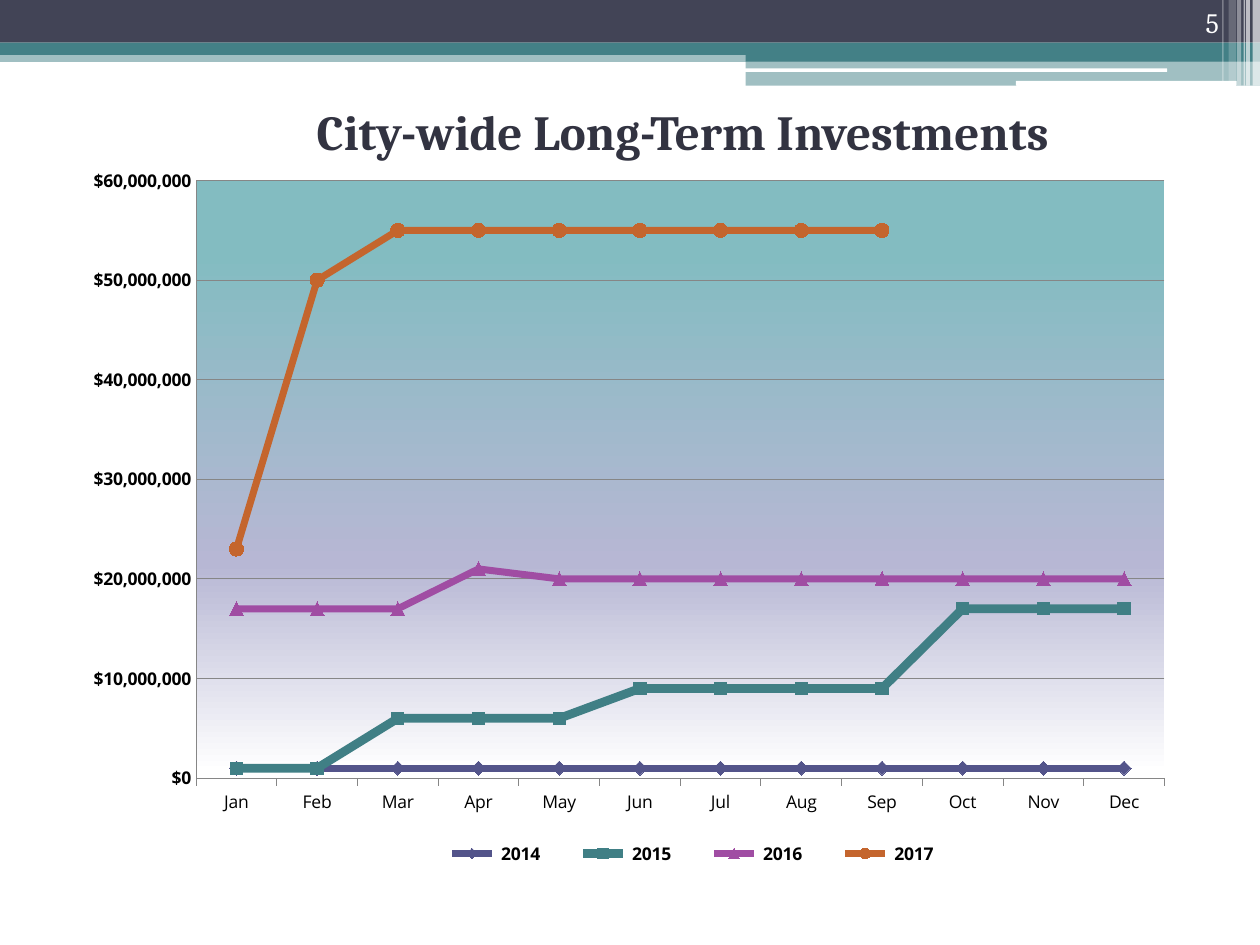
from lxml import etree
from pptx import Presentation
from pptx.chart.data import CategoryChartData
from pptx.dml.color import RGBColor
from pptx.enum.chart import XL_CHART_TYPE, XL_LEGEND_POSITION, XL_MARKER_STYLE, XL_TICK_MARK
from pptx.enum.shapes import MSO_SHAPE
from pptx.enum.text import MSO_ANCHOR, PP_ALIGN
from pptx.oxml import parse_xml
from pptx.oxml.ns import nsdecls, qn
from pptx.util import Cm, Pt

RECT, ROUNDED = MSO_SHAPE.RECTANGLE, MSO_SHAPE.ROUNDED_RECTANGLE
CENTER, RIGHT = PP_ALIGN.CENTER, PP_ALIGN.RIGHT
MIDDLE, BOTTOM = MSO_ANCHOR.MIDDLE, MSO_ANCHOR.BOTTOM
LINE_MARKERS = XL_CHART_TYPE.LINE_MARKERS
LEGEND_BOTTOM = XL_LEGEND_POSITION.BOTTOM
TICK_OUT, TICK_NONE = XL_TICK_MARK.OUTSIDE, XL_TICK_MARK.NONE
DIAMOND, SQUARE = XL_MARKER_STYLE.DIAMOND, XL_MARKER_STYLE.SQUARE
TRIANGLE, CIRCLE = XL_MARKER_STYLE.TRIANGLE, XL_MARKER_STYLE.CIRCLE

WHITE = RGBColor(0xFF, 0xFF, 0xFF)
BLACK = RGBColor(0x00, 0x00, 0x00)
SLATE = RGBColor(0x42, 0x44, 0x56)
TEAL = RGBColor(0x43, 0x80, 0x86)
TITLE_INK = RGBColor(0x32, 0x33, 0x41)
GRID_GRAY = RGBColor(0x86, 0x86, 0x86)
INDIGO = RGBColor(0x53, 0x54, 0x8A)
DEEP_TEAL = RGBColor(0x40, 0x7F, 0x85)
PURPLE = RGBColor(0xA0, 0x4D, 0xA3)
ORANGE = RGBColor(0xC4, 0x65, 0x2D)
PLOT_STOPS = [(12, "83BCC1"), (64, "B7B7D4"), (99, "FFFFFF")]

MONTHS = ["Jan", "Feb", "Mar", "Apr", "May", "Jun",
          "Jul", "Aug", "Sep", "Oct", "Nov", "Dec"]
MILLION = 1000000
INVESTMENTS = [
    (" 2014", [1] * 12, INDIGO, 4, DIAMOND, 8),
    (" 2015", [1] * 2 + [6] * 3 + [9] * 4 + [17] * 3, DEEP_TEAL, 5, SQUARE, 7),
    (" 2016", [17] * 3 + [21] + [20] * 8, PURPLE, 4, TRIANGLE, 8),
    (" 2017", [23, 50] + [55] * 7 + [None] * 3, ORANGE, 4, CIRCLE, 8),
]


def add_band(page, box, color, opacity=100, kind=RECT):
    """Add a borderless filled band, see-through when opacity is below 100."""
    band = page.shapes.add_shape(kind, *(Cm(length) for length in box))
    band.shadow.inherit = False
    band.line.fill.background()
    band.fill.solid()
    band.fill.fore_color.rgb = color
    if opacity < 100:
        tint = band.fill._xPr.find(qn("a:solidFill"))[0]
        etree.SubElement(tint, qn("a:alpha"), val=str(opacity * 1000))


def add_header(page, box):
    """Draw the layered header bands and the stripes at their right end."""
    left, top, width, height = box
    half = left + 15.03
    half_width = left + width - half
    add_band(page, (left, top + 1.02, width, 0.23), TEAL, 50)
    add_band(page, (left, top, width, 0.86), SLATE)
    add_band(page, (left, top + 0.86, width, 0.25), TEAL)
    add_band(page, (half, top + 0.99, half_width, 0.25), TEAL)
    add_band(page, (half, top + 1.23, half_width, 0.5), TEAL, 50)
    add_band(page, (left + 15.01, top + 1.38, 8.52, 0.07), WHITE, kind=ROUNDED)
    add_band(page, (left + 20.48, top + 1.63, 4.45, 0.1), WHITE, kind=ROUNDED)
    stripes = [(25.25, 0.15, height, 65), (25.12, 0.08, height, 65),
               (25.07, 0.03, height, 60), (24.94, 0.08, height, 40),
               (24.77, 0.15, height - 0.1, 20), (24.64, 0.03, height - 0.1, 30)]
    for offset, thickness, length, opacity in stripes:
        add_band(page, (left + offset, top, thickness, length), WHITE, opacity)


def add_label(page, box, text, size, color, align, anchor, bold=False):
    """Place one line of Cambria text in a box."""
    frame = page.shapes.add_textbox(*(Cm(length) for length in box)).text_frame
    frame.word_wrap = True
    frame.vertical_anchor = anchor
    para = frame.paragraphs[0]
    para.alignment = align
    span = para.add_run()
    span.text = text
    span.font.name = "Cambria"
    span.font.size = Pt(size)
    span.font.bold = bold
    span.font.color.rgb = color


def make_layout(x, y, width, height, inner=False):
    """Return a manual chart layout in fractions of the chart area."""
    target = '<c:layoutTarget val="inner"/>' if inner else ""
    return parse_xml(
        f'<c:layout {nsdecls("c")}><c:manualLayout>{target}'
        '<c:xMode val="edge"/><c:yMode val="edge"/>'
        f'<c:x val="{x}"/><c:y val="{y}"/><c:w val="{width}"/><c:h val="{height}"/>'
        '</c:manualLayout></c:layout>')


def style_plot_area(chart):
    """Fix the plot position and fill it with a vertical gradient."""
    area = chart._chartSpace.chart.plotArea
    for layout in area.findall(qn("c:layout")):
        area.remove(layout)
    area.insert(0, make_layout(0.127, 0.058, 0.854, 0.801, inner=True))
    stops = "".join(f'<a:gs pos="{place * 1000}"><a:srgbClr val="{color}"/></a:gs>'
                    for place, color in PLOT_STOPS)
    area.append(parse_xml(
        f'<c:spPr {nsdecls("c", "a")}><a:gradFill><a:gsLst>{stops}</a:gsLst>'
        '<a:lin ang="5400000" scaled="0"/></a:gradFill></c:spPr>'))


def style_axes(chart):
    """Set the scale, ticks, lines and label fonts of both axes."""
    months, dollars = chart.category_axis, chart.value_axis
    months.major_tick_mark = TICK_OUT
    dollars.major_tick_mark = TICK_NONE
    dollars.minimum_scale, dollars.maximum_scale = 0, 60 * MILLION
    dollars.major_unit = 10 * MILLION
    dollars.has_major_gridlines = True
    dollars.tick_labels.number_format = '"$"#,##0'
    dollars.tick_labels.number_format_is_linked = False
    dollars.tick_labels.font.bold = True
    for line in (months.format.line, dollars.format.line, dollars.major_gridlines.format.line):
        line.color.rgb = GRID_GRAY
        line.width = Pt(0.5)


def style_series(series, color, weight, marker, size):
    """Color one line and its markers."""
    series.smooth = False
    series.format.line.color.rgb = color
    series.format.line.width = Pt(weight)
    series.marker.style = marker
    series.marker.size = size
    series.marker.format.fill.solid()
    series.marker.format.fill.fore_color.rgb = color
    series.marker.format.line.color.rgb = color


def add_investment_chart(page, box):
    """Add the line chart of investments by month and year."""
    table = CategoryChartData(number_format='"$"#,##0')
    table.categories = MONTHS
    for year, millions, *_ in INVESTMENTS:
        table.add_series(year, [None if value is None else value * MILLION
                                for value in millions])
    frame = page.shapes.add_chart(LINE_MARKERS, *(Cm(length) for length in box), table)
    chart = frame.chart
    chart.has_title = False
    chart.font.name = "Open Sans"
    chart.font.size = Pt(10)
    chart.font.color.rgb = BLACK
    chart.plots[0].vary_by_categories = False
    for series, (_, _, *style) in zip(chart.plots[0].series, INVESTMENTS):
        style_series(series, *style)
    style_axes(chart)
    style_plot_area(chart)
    chart.has_legend = True
    chart.legend.position = LEGEND_BOTTOM
    chart.legend.include_in_layout = False
    chart.legend.font.bold = True
    legend = chart.legend._element
    for layout in legend.findall(qn("c:layout")):
        legend.remove(layout)
    legend.find(qn("c:legendPos")).addnext(make_layout(0.32, 0.93, 0.49, 0.06))


def main():
    """Build and save the deck."""
    deck = Presentation()
    deck.slide_width, deck.slide_height = Cm(25.4), Cm(19.05)
    page = deck.slides.add_slide(deck.slide_layouts[6])
    add_header(page, (0, 0, 25.4, 1.73))
    add_label(page, (1.48, 1.27, 24.56, 2.74), "City-wide Long-Term Investments",
              28, TITLE_INK, CENTER, MIDDLE, bold=True)
    add_label(page, (22.71, 0, 2.11, 0.91), "5", 16, WHITE, RIGHT, BOTTOM)
    add_investment_chart(page, (1.05, 2.77, 22.86, 15.04))
    deck.save("out.pptx")


if __name__ == "__main__":
    main()
